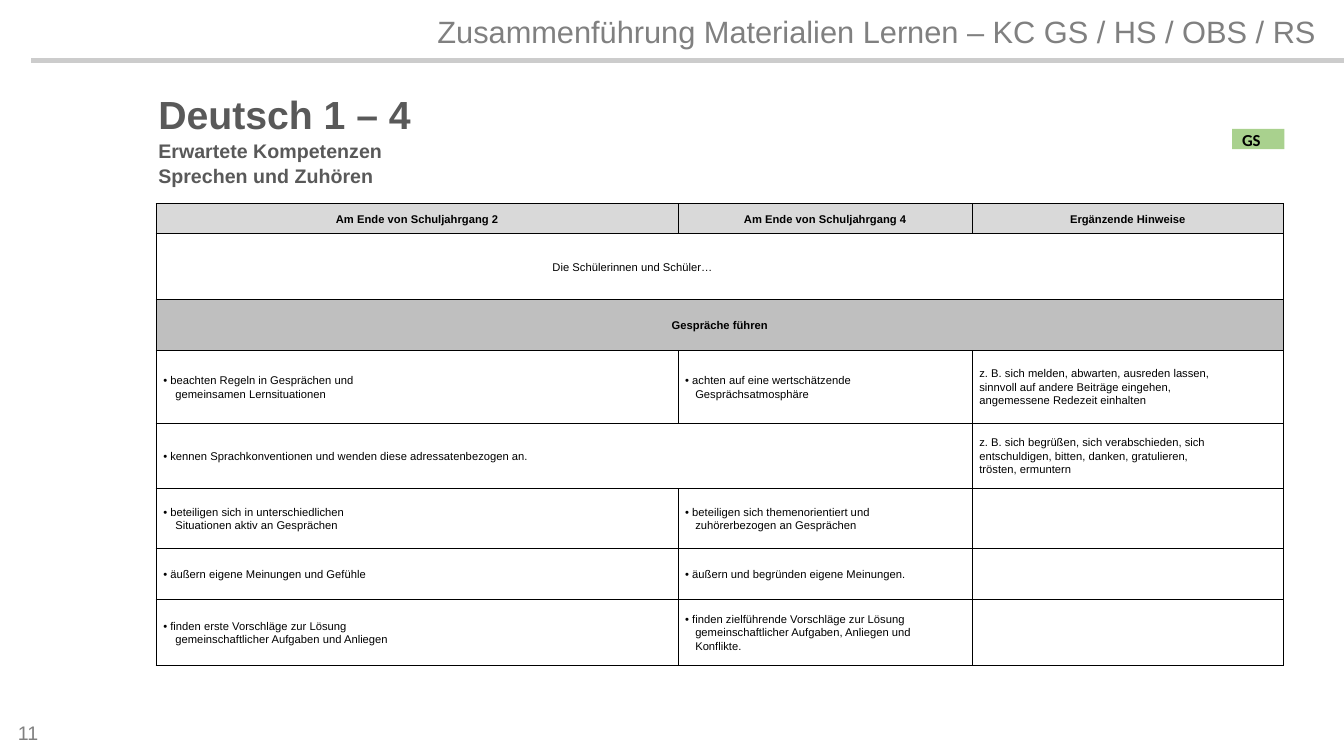
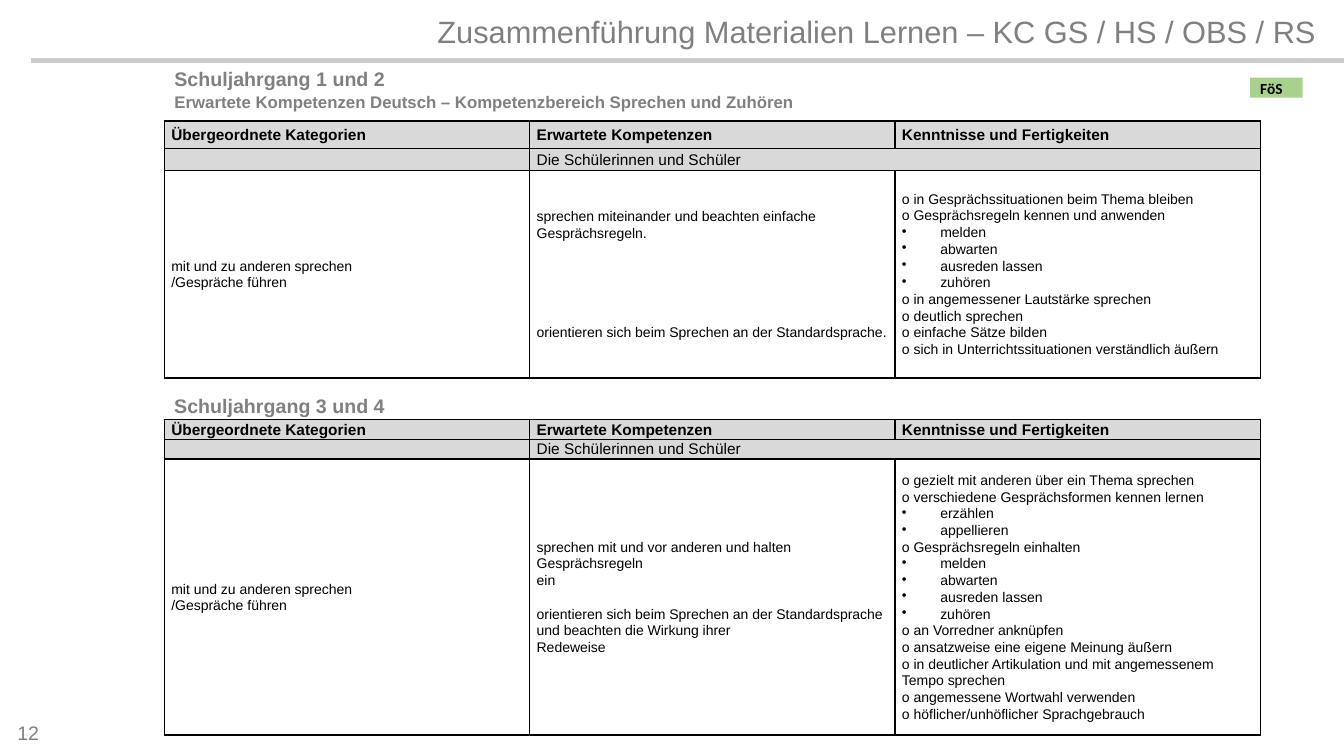
"""Build two slides of competence tables for German lessons."""
from dataclasses import dataclass, field, replace

from lxml import etree
from pptx import Presentation
from pptx.dml.color import RGBColor
from pptx.enum.shapes import MSO_CONNECTOR, MSO_SHAPE
from pptx.enum.text import MSO_ANCHOR, MSO_AUTO_SIZE, PP_ALIGN
from pptx.oxml.ns import qn
from pptx.util import Emu, Inches, Pt

LEFT, CENTER, RIGHT = PP_ALIGN.LEFT, PP_ALIGN.CENTER, PP_ALIGN.RIGHT
TOP, MIDDLE = MSO_ANCHOR.TOP, MSO_ANCHOR.MIDDLE
NO_AUTOSIZE = MSO_AUTO_SIZE.NONE
RECTANGLE, STRAIGHT = MSO_SHAPE.RECTANGLE, MSO_CONNECTOR.STRAIGHT

BLACK = RGBColor(0, 0, 0)
DARK_GREY = RGBColor(0x59, 0x59, 0x59)
GREY = RGBColor(0x80, 0x80, 0x80)
RULE_GREY = RGBColor(0xCC, 0xCC, 0xCC)
HEADING_FILL = RGBColor(0xD9, 0xD9, 0xD9)
SECTION_FILL = RGBColor(0xBF, 0xBF, 0xBF)
BADGE_GREEN = RGBColor(0xA9, 0xD1, 0x8E)

SLIDE_WIDTH, SLIDE_HEIGHT = 13.33, 7.5
TITLE_ONLY = 5
LINE_SPACING = 1.07
CELL_MARGINS = {"margin_left": Inches(0.07), "margin_right": Inches(0.07),
                "margin_top": 0, "margin_bottom": 0}
THIRDS = [1 / 3] * 3


@dataclass
class Cell:
    """Text and format of a table cell; a list in lines is indented, a pair is (gap, text)."""
    lines: list = field(default_factory=list)
    size: float = 10
    bold: bool = False
    align: int = LEFT
    fill: RGBColor = None
    span: int = 1
    margin: float = 0.38
    indent: float = 0
    bullet: str = ""


def apply(target, values):
    """Set each attribute of target named in values."""
    for name, value in values.items():
        setattr(target, name, value)


def format_text(paragraph, text, size, color, bold=False, font="Arial"):
    """Add text to a paragraph as one formatted run."""
    run = paragraph.add_run()
    run.text = text
    apply(run.font, {"name": font, "size": Pt(size), "bold": bold})
    run.font.color.rgb = color


def paragraphs_of(frame, count):
    """Yield count paragraphs of a text frame, using the first that exists."""
    for index in range(count):
        yield frame.add_paragraph() if index else frame.paragraphs[0]


def box(left, top, width, height):
    """Convert a box in inches to slide units."""
    return [Inches(length) for length in (left, top, width, height)]


def add_text(slide, bounds, text, size, color, align=LEFT, bold=False):
    """Add a wrapped text box with one line."""
    shape = slide.shapes.add_textbox(*box(*bounds))
    shape.text_frame.word_wrap = True
    paragraph = shape.text_frame.paragraphs[0]
    paragraph.alignment = align
    format_text(paragraph, text, size, color, bold)
    return shape


def add_rule(slide):
    """Add the grey line below the running header."""
    start, height = Inches(0.31), Inches(0.08 * SLIDE_HEIGHT)
    line = slide.shapes.add_connector(STRAIGHT, start, height, Inches(SLIDE_WIDTH), height)
    line.line.color.rgb = RULE_GREY
    line.line.width = Pt(3)
    etree.SubElement(line.element.spPr, qn("a:effectLst"))
    return line


def decorate_layout(layout, slide):
    """Draw the shared rule and running header and move them to the layout."""
    header = add_text(slide, (4, 0.08, 9.15, 0.47),
                      "Zusammenführung Materialien Lernen – KC GS / HS / OBS / RS",
                      22, GREY, RIGHT)
    for shape in (add_rule(slide), header):
        layout.shapes.element.append(shape.element)


def set_title(slide, bounds, lines, color):
    """Place the title and fill it with lines of (text, size)."""
    title = slide.shapes.title
    apply(title, dict(zip(("left", "top", "width", "height"), box(*bounds))))
    frame = title.text_frame
    apply(frame, {"vertical_anchor": TOP, "auto_size": NO_AUTOSIZE, "word_wrap": True})
    for paragraph, (text, size) in zip(paragraphs_of(frame, len(lines)), lines):
        apply(paragraph, {"alignment": LEFT, "line_spacing": LINE_SPACING})
        format_text(paragraph, text, size, color, True)


def add_page_number(slide, number):
    """Add the page number in the lower left corner."""
    add_text(slide, (0, 7.1, 0.56, 0.4), str(number), 14, GREY, CENTER)


def add_badge(slide, left, top, text, size):
    """Add the green school type badge."""
    badge = slide.shapes.add_shape(RECTANGLE, *box(left, top, 0.52, 0.2))
    badge.shadow.inherit = False
    badge.fill.solid()
    badge.fill.fore_color.rgb = BADGE_GREEN
    badge.line.fill.background()
    frame = badge.text_frame
    apply(frame, {"margin_top": 0, "margin_bottom": 0, "vertical_anchor": MIDDLE,
                  "word_wrap": True})
    apply(frame.paragraphs[0], {"alignment": LEFT, "line_spacing": LINE_SPACING})
    format_text(frame.paragraphs[0], text, size, BLACK, True, "Calibri")


def add_borders(cell):
    """Draw a black border on all sides of a cell."""
    properties = cell._tc.get_or_add_tcPr()
    for side in ("a:lnL", "a:lnR", "a:lnT", "a:lnB"):
        line = etree.SubElement(properties, qn(side), w=str(Pt(1)))
        fill = etree.SubElement(line, qn("a:solidFill"))
        etree.SubElement(fill, qn("a:srgbClr"), val=str(BLACK))


def set_indent(paragraph, content):
    """Indent a paragraph, with a bullet if the cell has one."""
    properties = paragraph._p.get_or_add_pPr()
    properties.set("marL", str(Inches(content.margin)))
    properties.set("indent", str(Inches(content.indent)))
    if content.bullet:
        etree.SubElement(properties, qn("a:buChar"), char=content.bullet)


def flatten(lines):
    """Yield (text, gap, indented) for each line of a cell."""
    for line in lines:
        if isinstance(line, list):
            yield from ((text, 0, True) for text in line)
        elif isinstance(line, tuple):
            yield line[1], line[0], False
        else:
            yield line, 0, False


def fill_cell(cell, content):
    """Write and format one table cell."""
    add_borders(cell)
    apply(cell, {**CELL_MARGINS, "vertical_anchor": MIDDLE})
    if content.fill is None:
        cell.fill.background()
    else:
        cell.fill.solid()
        cell.fill.fore_color.rgb = content.fill
    lines = list(flatten(content.lines))
    if not lines:
        etree.SubElement(cell.text_frame.paragraphs[0]._p, qn("a:endParaRPr"),
                         sz=str(int(content.size * 100)))
    paragraphs = paragraphs_of(cell.text_frame, len(lines))
    for paragraph, (text, gap, indented) in zip(paragraphs, lines):
        if indented:
            set_indent(paragraph, content)
        apply(paragraph, {"alignment": content.align, "line_spacing": LINE_SPACING})
        if gap:
            paragraph.space_before = Pt(gap)
        format_text(paragraph, text, content.size, BLACK, content.bold)


def add_table(slide, left, top, width, shares, heights, rows):
    """Add a table with column widths as shares of its width."""
    bounds = box(left, top, width, sum(heights))
    table = slide.shapes.add_table(len(rows), len(shares), *bounds).table
    apply(table, {"first_row": False, "horz_banding": False})
    for column, share in zip(table.columns, shares):
        column.width = Emu(int(bounds[2] * share))
    for row_index, (height, row) in enumerate(zip(heights, rows)):
        table.rows[row_index].height = Inches(height)
        column_index = 0
        for content in row:
            last = column_index + content.span - 1
            if content.span > 1:
                table.cell(row_index, column_index).merge(table.cell(row_index, last))
            fill_cell(table.cell(row_index, column_index), content)
            for hidden in range(column_index + 1, last + 1):
                fill_cell(table.cell(row_index, hidden), replace(content, lines=[]))
            column_index = last + 1


def heading_cells(texts, **values):
    """Return bold heading cells on grey."""
    return [Cell([text], bold=True, fill=HEADING_FILL, **values) for text in texts]


def overview_row(first, second, note=()):
    """Return the cells of one row of the overview table."""
    return [Cell(first, size=8, margin=0.12), Cell(second, size=8, margin=0.1),
            Cell(list(note), size=8)]


def build_overview(slide):
    """Fill the slide for grades 1 to 4."""
    set_title(slide, (1.47, 0.81, 11.34, 0.57),
              [("Deutsch 1 – 4", 28), ("Erwartete Kompetenzen", 14),
               ("Sprechen und Zuhören", 14)], DARK_GREY)
    rows = [
        heading_cells(["Am Ende von Schuljahrgang 2", "Am Ende von Schuljahrgang 4",
                       "Ergänzende Hinweise"], size=8, align=CENTER),
        [Cell([["Die Schülerinnen und Schüler…"]], size=8, span=3, margin=3.86)],
        [Cell(["Gespräche führen"], 8, True, CENTER, SECTION_FILL, 3)],
        overview_row(
            ["• beachten Regeln in Gesprächen und", ["gemeinsamen Lernsituationen"]],
            ["• achten auf eine wertschätzende", ["Gesprächsatmosphäre"]],
            ["z. B. sich melden, abwarten, ausreden lassen,",
             "sinnvoll auf andere Beiträge eingehen,", "angemessene Redezeit einhalten"]),
        [Cell(["• kennen Sprachkonventionen und wenden diese adressatenbezogen an."],
              size=8, span=2),
         Cell(["z. B. sich begrüßen, sich verabschieden, sich",
               "entschuldigen, bitten, danken, gratulieren,", "trösten, ermuntern"], size=8)],
        overview_row(
            ["• beteiligen sich in unterschiedlichen", ["Situationen aktiv an Gesprächen"]],
            ["• beteiligen sich themenorientiert und", ["zuhörerbezogen an Gesprächen"]]),
        overview_row(["• äußern eigene Meinungen und Gefühle"],
                     ["• äußern und begründen eigene Meinungen."]),
        overview_row(
            ["• finden erste Vorschläge zur Lösung", ["gemeinschaftlicher Aufgaben und Anliegen"]],
            ["• finden zielführende Vorschläge zur Lösung",
             ["gemeinschaftlicher Aufgaben, Anliegen und", "Konflikte."]]),
    ]
    add_table(slide, 1.55, 2.02, 11.18, [0.463, 0.261, 0.276],
              [0.3, 0.65, 0.51, 0.72, 0.65, 0.59, 0.51, 0.65], rows)
    add_page_number(slide, 11)
    add_badge(slide, 12.22, 1.28, "GS", 12)


def add_grade_table(slide, top, heights, competences, skills):
    """Add the table of competences and skills for two grades."""
    rows = [
        heading_cells(["Übergeordnete Kategorien", "Erwartete Kompetenzen",
                       "Kenntnisse und Fertigkeiten"], size=11),
        [Cell(fill=HEADING_FILL),
         Cell(["Die Schülerinnen und Schüler"], size=11, fill=HEADING_FILL, span=2)],
        [Cell(["mit und zu anderen sprechen", "/Gespräche führen"]), Cell(competences),
         Cell(skills, indent=-0.38, bullet="•")],
    ]
    add_table(slide, 1.63, top, 10.87, THIRDS, heights, rows)


def build_grades(slide):
    """Fill the slide that compares grades 1 and 2 with grades 3 and 4."""
    rules = ["melden", "abwarten", "ausreden lassen", "zuhören"]
    set_title(slide, (1.63, 0.6, 11.34, 0.6),
              [("Schuljahrgang 1 und 2", 14),
               ("Erwartete Kompetenzen Deutsch – Kompetenzbereich Sprechen und Zuhören", 12)],
              GREY)
    add_grade_table(
        slide, 1.2, [0.27, 0.22, 2.06],
        ["sprechen miteinander und beachten einfache", "Gesprächsregeln.",
         (59, "orientieren sich beim Sprechen an der Standardsprache.")],
        ["o in Gesprächssituationen beim Thema bleiben",
         "o Gesprächsregeln kennen und anwenden", rules,
         "o in angemessener Lautstärke sprechen", "o deutlich sprechen",
         "o einfache Sätze bilden", "o sich in Unterrichtssituationen verständlich äußern"])
    add_page_number(slide, 12)
    add_badge(slide, 12.4, 0.77, "FöS", 11)
    add_grade_table(
        slide, 4.16, [0.19, 0.19, 2.74],
        ["sprechen mit und vor anderen und halten Gesprächsregeln", "ein",
         (12, "orientieren sich beim Sprechen an der Standardsprache"),
         "und beachten die Wirkung ihrer", "Redeweise"],
        ["o gezielt mit anderen über ein Thema sprechen",
         "o verschiedene Gesprächsformen kennen lernen", ["erzählen", "appellieren"],
         "o Gesprächsregeln einhalten", rules, "o an Vorredner anknüpfen",
         "o ansatzweise eine eigene Meinung äußern",
         "o in deutlicher Artikulation und mit angemessenem Tempo sprechen",
         "o angemessene Wortwahl verwenden", "o höflicher/unhöflicher Sprachgebrauch"])
    add_text(slide, (1.63, 3.86, 7, 0.3), "Schuljahrgang 3 und 4", 14, GREY, bold=True)


def main():
    """Build and save the presentation."""
    presentation = Presentation()
    apply(presentation, {"slide_width": Inches(SLIDE_WIDTH),
                         "slide_height": Inches(SLIDE_HEIGHT)})
    layout = presentation.slide_layouts[TITLE_ONLY]
    overview, grades = [presentation.slides.add_slide(layout) for _ in range(2)]
    decorate_layout(layout, overview)
    build_overview(overview)
    build_grades(grades)
    presentation.save("out.pptx")


if __name__ == "__main__":
    main()
